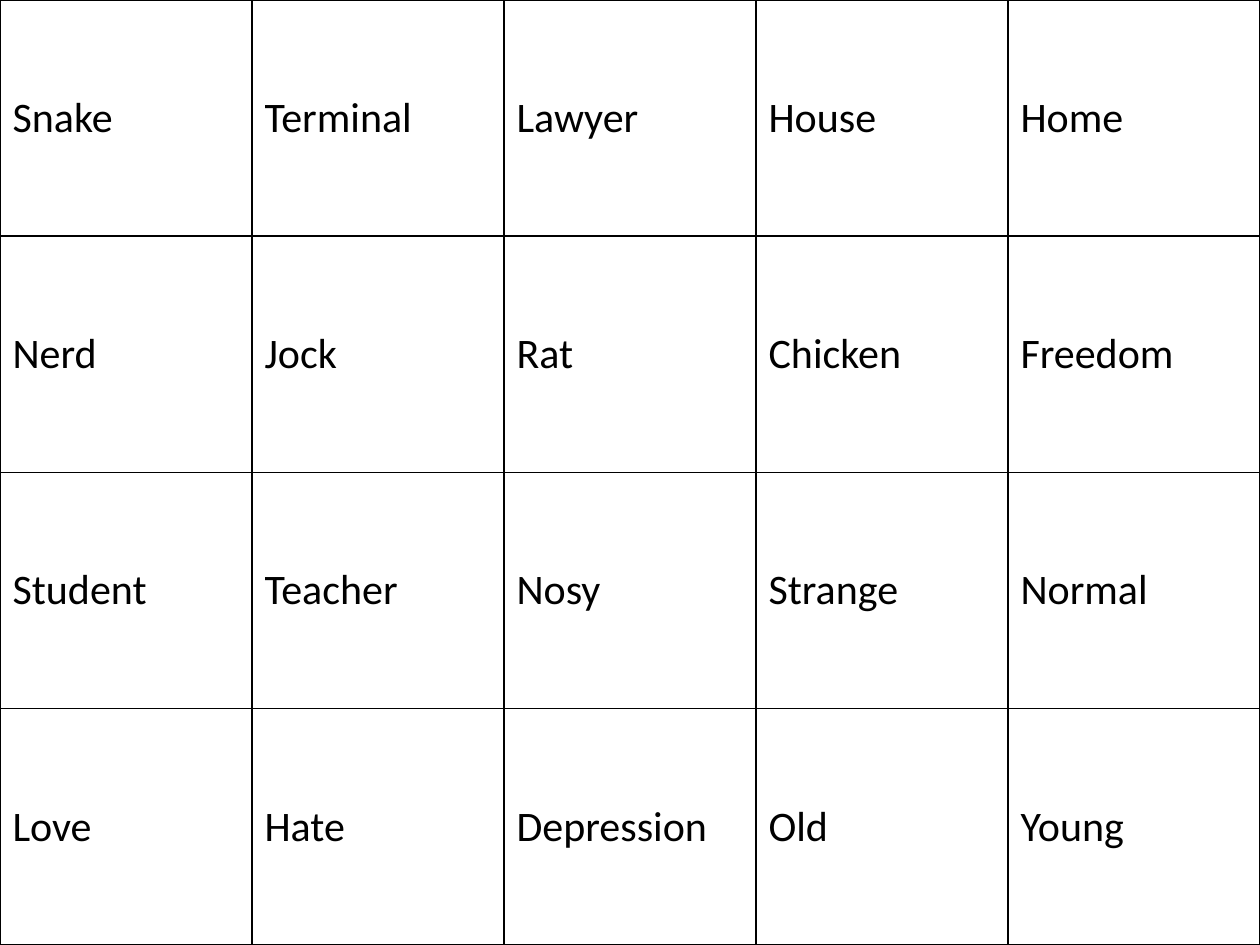
from dataclasses import dataclass

from lxml.etree import SubElement
from pptx import Presentation
from pptx.dml.color import RGBColor
from pptx.enum.text import MSO_ANCHOR
from pptx.oxml.ns import qn
from pptx.util import Pt


@dataclass(frozen=True)
class Theme:
    font: str = "Calibri"
    text_size: int = 24
    text_color: str = "000000"
    border_color: str = "000000"
    border_width: int = 1


THEME = Theme()
SLIDE_WIDTH, SLIDE_HEIGHT = Pt(720), Pt(540)

WORDS = [
    ["Snake", "Terminal", "Lawyer", "House", "Home"],
    ["Nerd", "Jock", "Rat", "Chicken", "Freedom"],
    ["Student", "Teacher", "Nosy", "Strange", "Normal"],
    ["Love", "Hate", "Depression", "Old", "Young"],
]


def set_borders(cell):
    """Draw a solid line on all four sides; call before setting the fill."""
    properties = cell._tc.get_or_add_tcPr()
    for side in ("a:lnL", "a:lnR", "a:lnT", "a:lnB"):
        line = SubElement(properties, qn(side), w=str(Pt(THEME.border_width)))
        fill = SubElement(line, qn("a:solidFill"))
        SubElement(fill, qn("a:srgbClr"), val=THEME.border_color)


def fill_cell(cell, word):
    set_borders(cell)
    cell.fill.background()
    cell.vertical_anchor = MSO_ANCHOR.MIDDLE
    cell.text = word
    paragraph = cell.text_frame.paragraphs[0]
    paragraph.font.name = THEME.font
    paragraph.font.size = Pt(THEME.text_size)
    paragraph.font.color.rgb = RGBColor.from_string(THEME.text_color)


def add_word_cards(slide, words):
    """Cover the slide with a grid of equal cards."""
    table = slide.shapes.add_table(
        len(words), len(words[0]), Pt(0), Pt(0), SLIDE_WIDTH, SLIDE_HEIGHT
    ).table
    table.first_row = False
    table.horz_banding = False
    for row, row_words in enumerate(words):
        for column, word in enumerate(row_words):
            fill_cell(table.cell(row, column), word)


def main():
    presentation = Presentation()
    presentation.slide_width = SLIDE_WIDTH
    presentation.slide_height = SLIDE_HEIGHT
    slide = presentation.slides.add_slide(presentation.slide_layouts[6])

    # Word cards
    add_word_cards(slide, WORDS)

    presentation.save("out.pptx")


if __name__ == "__main__":
    main()
